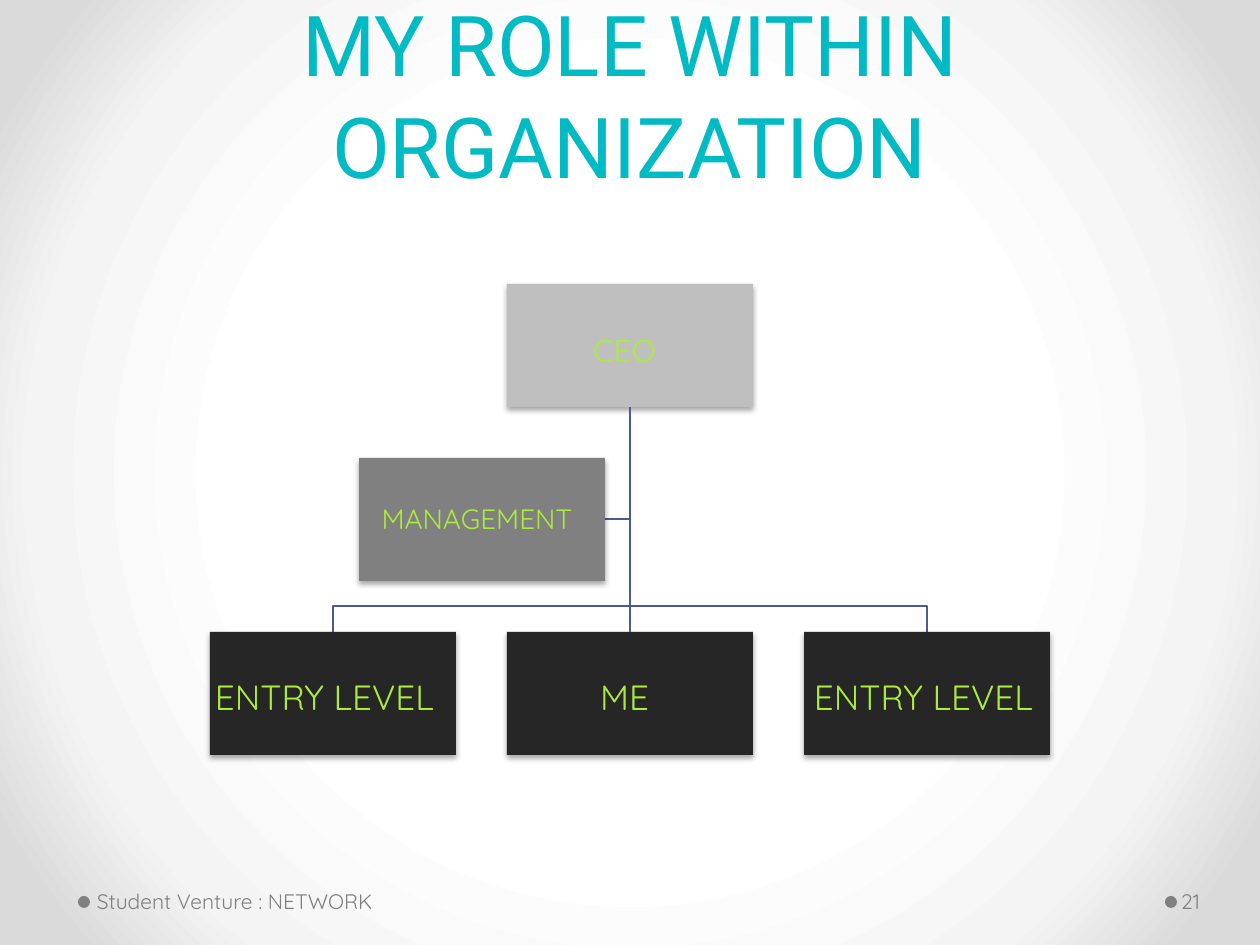
"""Build an organization chart slide showing a role within a company."""
from dataclasses import dataclass

from pptx import Presentation
from pptx.dml.color import RGBColor
from pptx.enum.shapes import MSO_CONNECTOR, MSO_SHAPE
from pptx.enum.text import MSO_ANCHOR, PP_ALIGN
from pptx.oxml import parse_xml
from pptx.oxml.ns import nsdecls, qn
from pptx.shapes.autoshape import Shape
from pptx.slide import Slide
from pptx.util import Emu, Pt

SCALE = 914400 / 126
TEAL = RGBColor(0x00, 0xBA, 0xC4)
LIME = RGBColor(0xAA, 0xEC, 0x39)
GRAY = RGBColor(0x80, 0x80, 0x80)
SILVER = RGBColor(0xBF, 0xBF, 0xBF)
CHARCOAL = RGBColor(0x26, 0x26, 0x26)
NAVY = RGBColor(0x4A, 0x5B, 0x8E)

BOX_WIDTH, BOX_HEIGHT = 246, 123
CENTER, COLUMN_STEP = 630, 297
TOP_ROW, MIDDLE_ROW, BOTTOM_ROW = 284, 458, 632
BUS = 606
LINE_WIDTH = Pt(0.75)
LABEL_INSETS = (6, 6, 13, 6)
BACKGROUND_STOPS = ((50, "FFFFFF"), (76, "F4F4F4"), (92, "DADADA"))


@dataclass(frozen=True)
class Label:
    text: str
    left: int
    top: int
    width: int
    height: int
    size: int
    color: RGBColor = LIME
    font: str = "Quicksand"
    align: PP_ALIGN = PP_ALIGN.CENTER
    anchor: MSO_ANCHOR = MSO_ANCHOR.MIDDLE
    insets: tuple[int, int, int, int] = LABEL_INSETS
    line_spacing: Pt | None = None


@dataclass(frozen=True)
class Box:
    center: int
    top: int
    fill: RGBColor

    @property
    def left(self) -> int:
        return self.center - BOX_WIDTH // 2


CEO = Box(CENTER, TOP_ROW, SILVER)
ENTRY_LEFT = Box(CENTER - COLUMN_STEP, BOTTOM_ROW, CHARCOAL)
ME = Box(CENTER, BOTTOM_ROW, CHARCOAL)
ENTRY_RIGHT = Box(CENTER + COLUMN_STEP, BOTTOM_ROW, CHARCOAL)
MANAGEMENT = Box(CENTER - COLUMN_STEP // 2, MIDDLE_ROW, GRAY)
BOXES = (CEO, ENTRY_LEFT, ME, ENTRY_RIGHT, MANAGEMENT)

LABELS = (
    Label("MY ROLE WITHIN ORGANIZATION", 63, 18, 1134, 183, 48, TEAL, "Roboto",
          anchor=MSO_ANCHOR.BOTTOM, insets=(13, 6, 13, 6), line_spacing=Pt(58)),
    Label("Student Venture : NETWORK", 91, 876, 392, 50, 12, GRAY, align=PP_ALIGN.LEFT),
    Label("21", 1177, 876, 77, 50, 12, GRAY, align=PP_ALIGN.LEFT, insets=(4, 6, 6, 6)),
    Label("CEO", 494, 291, 268, 118, 18),
    Label("MANAGEMENT", 333, 459, 295, 118, 16),
    Label("ME", 494, 637, 268, 118, 20),
    Label("ENTRY LEVEL", 793, 637, 268, 118, 20),
    Label("ENTRY LEVEL", 194, 637, 268, 118, 20),
)
DOT_LEFTS = (1165, 78)
DOT_TOP, DOT_SIZE = 896, 12


def px(value: int) -> Emu:
    """Turn pixels into EMU."""
    return Emu(round(value * SCALE))


def set_background(slide: Slide) -> None:
    """Give the slide a radial gradient."""
    stops = "".join(
        f'<a:gs pos="{position * 1000}"><a:srgbClr val="{color}"/></a:gs>'
        for position, color in BACKGROUND_STOPS
    )
    slide.element.cSld.insert(0, parse_xml(
        f'<p:bg {nsdecls("p", "a")}><p:bgPr><a:gradFill rotWithShape="1">'
        f'<a:gsLst>{stops}</a:gsLst><a:path path="circle">'
        '<a:fillToRect l="50000" t="50000" r="50000" b="50000"/></a:path>'
        '</a:gradFill><a:effectLst/></p:bgPr></p:bg>'
    ))


def add_filled(slide: Slide, kind: MSO_SHAPE, left: int, top: int,
               width: int, height: int, color: RGBColor) -> Shape:
    """Add a borderless filled shape."""
    shape = slide.shapes.add_shape(kind, px(left), px(top), px(width), px(height))
    shape.shadow.inherit = False
    shape.fill.solid()
    shape.fill.fore_color.rgb = color
    shape.line.fill.background()
    return shape


def add_box(slide: Slide, box: Box) -> Shape:
    """Add a chart box with a soft shadow below it."""
    shape = add_filled(slide, MSO_SHAPE.RECTANGLE, box.left, box.top,
                       BOX_WIDTH, BOX_HEIGHT, box.fill)
    shape.element.spPr.find(qn("a:effectLst")).append(parse_xml(
        f'<a:outerShdw {nsdecls("a")} blurRad="40000" dist="23000" dir="5400000" '
        'rotWithShape="0"><a:srgbClr val="000000"><a:alpha val="35000"/>'
        '</a:srgbClr></a:outerShdw>'
    ))
    return shape


def add_branch(slide: Slide, *points: tuple[int, int]) -> None:
    """Add an angled line from the bottom of the CEO box through the points."""
    builder = slide.shapes.build_freeform(CENTER, TOP_ROW + BOX_HEIGHT, scale=SCALE)
    builder.add_line_segments(points, close=False)
    shape = builder.convert_to_shape()
    shape.shadow.inherit = False
    shape.fill.background()
    shape.line.color.rgb = NAVY
    shape.line.width = LINE_WIDTH


def add_trunk(slide: Slide, upper: Shape, lower: Shape) -> None:
    """Join two boxes by a straight vertical line."""
    connector = slide.shapes.add_connector(MSO_CONNECTOR.STRAIGHT, 0, 0, 0, 0)
    connector.begin_connect(upper, 2)
    connector.end_connect(lower, 0)
    connector.line.color.rgb = NAVY
    connector.line.width = LINE_WIDTH
    connector.element.spPr.append(parse_xml(f'<a:effectLst {nsdecls("a")}/>'))


def add_label(slide: Slide, label: Label) -> None:
    """Add a text box."""
    text_box = slide.shapes.add_textbox(px(label.left), px(label.top),
                                        px(label.width), px(label.height))
    frame = text_box.text_frame
    frame.word_wrap = True
    frame.vertical_anchor = label.anchor
    (frame.margin_left, frame.margin_top,
     frame.margin_right, frame.margin_bottom) = map(px, label.insets)
    paragraph = frame.paragraphs[0]
    paragraph.text = label.text
    paragraph.alignment = label.align
    paragraph.line_spacing = label.line_spacing
    paragraph.font.name = label.font
    paragraph.font.size = Pt(label.size)
    paragraph.font.color.rgb = label.color


def main() -> None:
    """Build and save the presentation."""
    presentation = Presentation()
    presentation.slide_width, presentation.slide_height = px(1260), px(945)
    slide = presentation.slides.add_slide(presentation.slide_layouts[6])
    set_background(slide)
    for left in DOT_LEFTS:
        add_filled(slide, MSO_SHAPE.OVAL, left, DOT_TOP, DOT_SIZE, DOT_SIZE, GRAY)
    management_middle = MIDDLE_ROW + BOX_HEIGHT // 2
    add_branch(slide, (CENTER, management_middle),
               (MANAGEMENT.left + BOX_WIDTH, management_middle))
    for entry in (ENTRY_RIGHT, ENTRY_LEFT):
        add_branch(slide, (CENTER, BUS), (entry.center, BUS), (entry.center, BOTTOM_ROW))
    shapes = {box: add_box(slide, box) for box in BOXES}
    add_trunk(slide, shapes[CEO], shapes[ME])
    for label in LABELS:
        add_label(slide, label)
    presentation.save("out.pptx")


if __name__ == "__main__":
    main()
